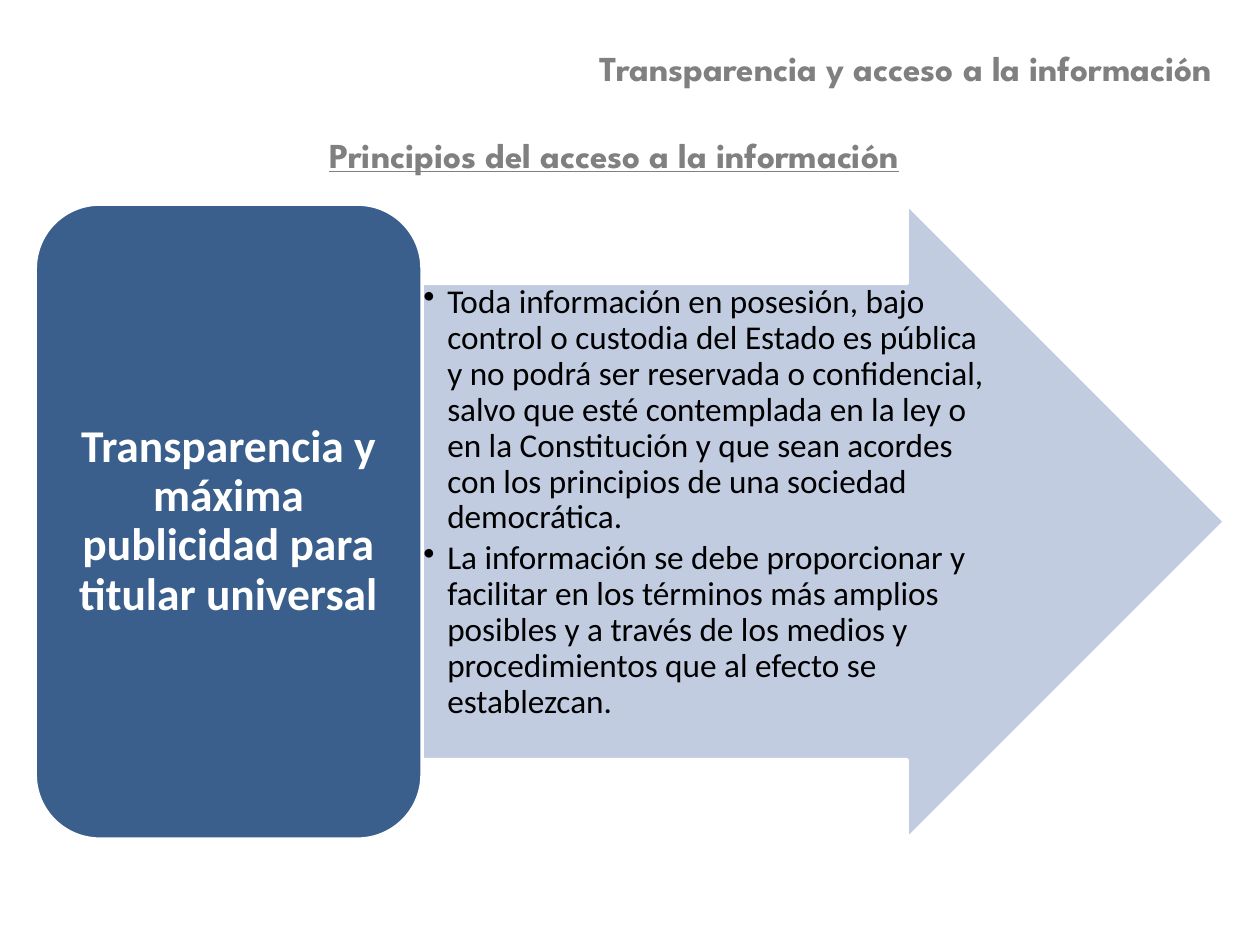
"""Build the slide on the principles of access to information."""
from dataclasses import dataclass

from lxml import etree
from pptx import Presentation
from pptx.dml.color import RGBColor
from pptx.enum.shapes import MSO_SHAPE
from pptx.enum.text import MSO_ANCHOR, PP_ALIGN
from pptx.oxml.ns import qn
from pptx.util import Inches, Pt

ARROW, ROUNDED = MSO_SHAPE.RIGHT_ARROW, MSO_SHAPE.ROUNDED_RECTANGLE
TOP, MIDDLE = MSO_ANCHOR.TOP, MSO_ANCHOR.MIDDLE
LEFT, CENTER, RIGHT = PP_ALIGN.LEFT, PP_ALIGN.CENTER, PP_ALIGN.RIGHT
COLS, ROWS = 100, 75

PRINCIPLE = "Transparencia y máxima publicidad para titular universal"
DETAILS = [
    "Toda información en posesión, bajo control o custodia del Estado es pública "
    "y no podrá ser reservada o confidencial, salvo que esté contemplada en la ley "
    "o en la Constitución y que sean acordes con los principios de una sociedad "
    "democrática.",
    "La información se debe proporcionar y facilitar en los términos más amplios "
    "posibles y a través de los medios y procedimientos que al efecto se establezcan.",
]


@dataclass(frozen=True)
class Theme:
    heading_font: str = "League Spartan"
    body_font: str = "Calibri"
    heading_size: int = 20
    principle_size: int = 26
    detail_size: int = 19
    grey: str = "808080"
    black: str = "000000"
    white: str = "FFFFFF"
    navy: str = "3A5F8C"
    pale: str = "BBC7DE"
    outline: int = 2
    indent: float = 0.19
    line_spacing: float = 0.9
    detail_gap: float = 0.15


class Deck:
    def __init__(self, theme):
        self.t = theme
        self.prs = Presentation()
        self.prs.slide_width, self.prs.slide_height = Inches(10), Inches(7.5)
        self.s = self.prs.slides.add_slide(self.prs.slide_layouts[6])

    def box(self, col, row, cols, rows):
        w, h = self.prs.slide_width, self.prs.slide_height
        return [round(v) for v in (col * w / COLS, row * h / ROWS,
                                   cols * w / COLS, rows * h / ROWS)]

    def shape(self, kind, cell, color, opacity=None, adjustments=()):
        sp = self.s.shapes.add_shape(kind, *self.box(*cell))
        sp.shadow.inherit = False
        for i, value in enumerate(adjustments):
            sp.adjustments[i] = value
        sp.fill.solid()
        sp.fill.fore_color.rgb = RGBColor.from_string(color)
        if opacity:
            clr = sp.fill._xPr.find(qn("a:solidFill"))[0]
            etree.SubElement(clr, qn("a:alpha"), val=str(opacity * 1000))
        sp.line.color.rgb = RGBColor.from_string(self.t.white)
        sp.line.width = Pt(self.t.outline)

    def text(self, cell, paragraphs, size, color, font, align=LEFT, anchor=TOP,
             bold=None, underline=None, spacing=None, inset=None, bullets=False):
        tf = self.s.shapes.add_textbox(*self.box(*cell)).text_frame
        tf.word_wrap = True
        tf.vertical_anchor = anchor
        if inset is not None:
            tf.margin_left = tf.margin_right = Inches(inset)
            tf.margin_top = tf.margin_bottom = Inches(inset)
        for i, words in enumerate(paragraphs):
            p = tf.add_paragraph() if i else tf.paragraphs[0]
            p.alignment = align
            if spacing:
                p.line_spacing = spacing
            if bullets:
                p.space_after = Pt(round(size * self.t.detail_gap, 2))
                self.bullet(p)
            r = p.add_run()
            r.text = words
            f = r.font
            f.name, f.size, f.bold, f.underline = font, Pt(size), bold, underline
            f.color.rgb = RGBColor.from_string(color)

    def bullet(self, p):
        indent = Inches(self.t.indent)
        pPr = p._p.get_or_add_pPr()
        pPr.set("marL", str(indent))
        pPr.set("indent", str(-indent))
        etree.SubElement(pPr, qn("a:buChar"), char="•")

    def heading(self, cell, words, align, anchor=TOP, underline=None):
        t = self.t
        self.text(cell, [words], t.heading_size, t.grey, t.heading_font, align,
                  anchor, bold=True, underline=underline)

    def principle(self, cell, words):
        t = self.t
        self.shape(ROUNDED, cell, t.navy)
        col, row, cols, rows = cell
        inner = (col + 1.5, row + 1.5, cols - 3, rows - 3)
        self.text(inner, [words], t.principle_size, t.white, t.body_font, CENTER,
                  MIDDLE, bold=True, spacing=t.line_spacing)

    def details(self, cell, paragraphs, head=0.5, shaft=0.75):
        t = self.t
        self.shape(ARROW, cell, t.pale, 90, (shaft, head))
        col, row, cols, rows = cell
        inner = (col, row + rows * (1 - shaft) / 2,
                 cols - rows * head * shaft, rows * shaft)
        self.text(inner, paragraphs, t.detail_size, t.black, t.body_font,
                  spacing=t.line_spacing, inset=0.01, bullets=True)


def main():
    deck = Deck(Theme())
    deck.heading((3.5, 9.1, 90.5, 6.4), "Principios del acceso a la información",
                 CENTER, MIDDLE, underline=True)
    deck.details((33.5, 16.2, 63.7, 50.4), DETAILS)
    deck.principle((2.8, 16.2, 30.7, 50.4), PRINCIPLE)
    deck.heading((36.6, 3.2, 60.6, 4.4), "Transparencia y acceso a la información",
                 RIGHT)
    deck.prs.save("out.pptx")


if __name__ == "__main__":
    main()
